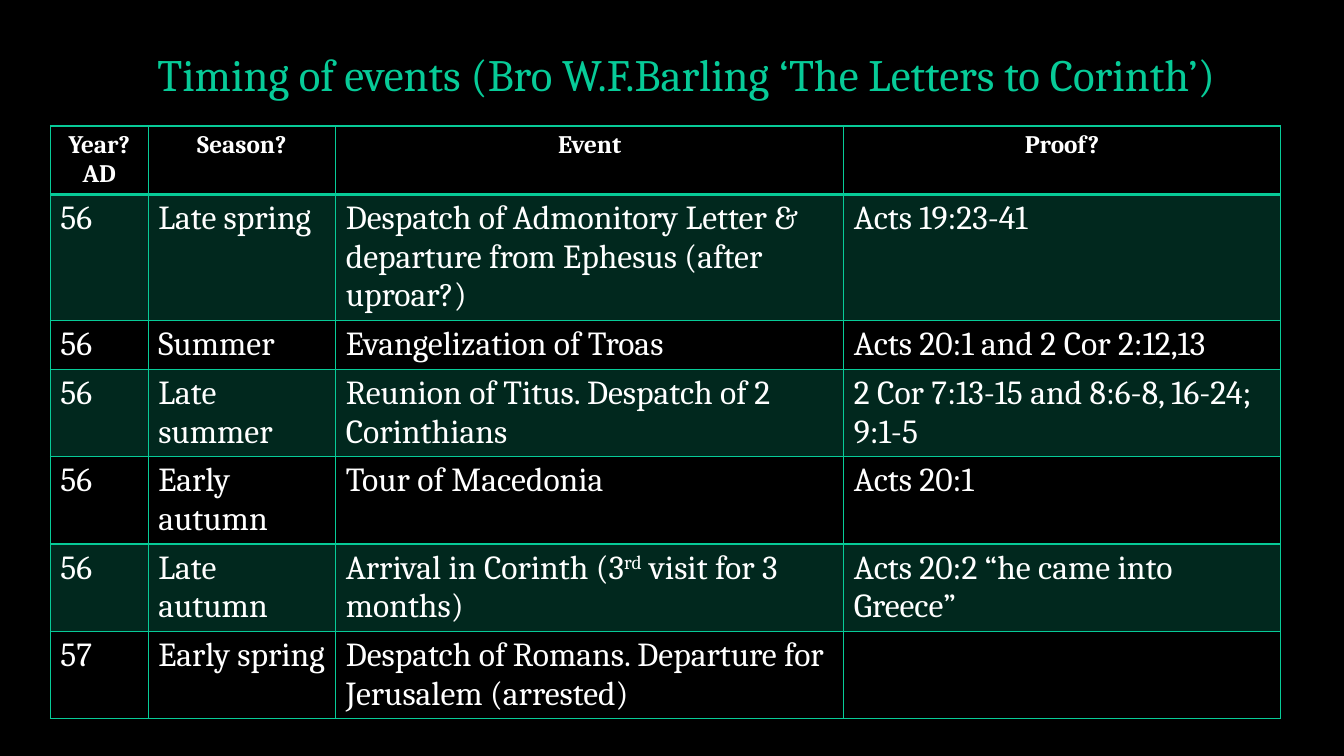
"""Builds the slide that dates the events around the letters to Corinth."""
from lxml import etree
from pptx import Presentation
from pptx.dml.color import RGBColor
from pptx.enum.text import MSO_ANCHOR, MSO_AUTO_SIZE, PP_ALIGN
from pptx.oxml.ns import qn
from pptx.util import Emu, Pt

CENTER, LEFT = PP_ALIGN.CENTER, PP_ALIGN.LEFT
BOTTOM = MSO_ANCHOR.BOTTOM
NO_AUTOFIT = MSO_AUTO_SIZE.NONE
EMU_PER_PX = 9144
TITLE_ONLY = 5

TITLE = "Timing of events (Bro W.F.Barling ‘The Letters to Corinth’)"
COLUMN_WIDTHS = [97, 186, 504, 433]
ROW_HEIGHT = 41
EVENTS = [
    ["Year? AD", "Season?", "Event", "Proof?"],
    ["56", "Late spring",
     "Despatch of Admonitory Letter & departure from Ephesus (after uproar?)",
     "Acts 19:23-41"],
    ["56", "Summer", "Evangelization of Troas", "Acts 20:1 and 2 Cor 2:12,13"],
    ["56", "Late summer", "Reunion of Titus. Despatch of 2 Corinthians",
     "2 Cor 7:13-15 and 8:6-8, 16-24; 9:1-5"],
    ["56", "Early autumn", "Tour of Macedonia", "Acts 20:1"],
    ["56", "Late autumn", "Arrival in Corinth (3^rd^ visit for 3 months)",
     "Acts 20:2 “he came into Greece”"],
    ["57", "Early spring",
     "Despatch of Romans. Departure for Jerusalem (arrested)", ""],
]


def px(length):
    return Emu(length * EMU_PER_PX)


def color(value):
    return RGBColor.from_string(value)


def write(frame, text, font="Cambria", size=24, ink="FFFFFF", bold=False,
          align=LEFT, spacing=None):
    para = frame.paragraphs[0]
    para.alignment = align
    para.line_spacing = spacing
    for index, part in enumerate(text.split("^")):
        if not part:
            continue
        span = para.add_run()
        span.text = part
        span.font.name = font
        span.font.size = Pt(size)
        span.font.bold = bold
        span.font.color.rgb = color(ink)
        if index % 2:
            span.font._element.set("baseline", "30000")


class Page:
    accent = "07CB98"
    background = "000000"
    band_alpha = 20

    def __init__(self, deck):
        self.slide = deck.slides.add_slide(deck.slide_layouts[TITLE_ONLY])
        fill = self.slide.background.fill
        fill.solid()
        fill.fore_color.rgb = color(self.background)

    def title(self, text, left, top, width, height):
        box = self.slide.shapes.title
        box.left, box.top = px(left), px(top)
        box.width, box.height = px(width), px(height)
        frame = box.text_frame
        frame.word_wrap = True
        frame.auto_size = NO_AUTOFIT
        frame.vertical_anchor = BOTTOM
        write(frame, text, size=32, ink=self.accent, align=CENTER, spacing=0.9)

    def table(self, rows, widths, row_height, left, top, height):
        holder = self.slide.shapes.add_table(
            len(rows), len(widths), px(left), px(top), px(sum(widths)), px(height))
        table = holder.table
        table.horz_banding = False
        table.first_row = False
        for column, width in zip(table.columns, widths):
            column.width = px(width)
        for row_index, texts in enumerate(rows):
            table.rows[row_index].height = px(row_height)
            for column_index, text in enumerate(texts):
                cell = table.cell(row_index, column_index)
                self.fill_cell(cell, banded=row_index % 2 == 1)
                self.border_cell(cell, top=2 if row_index == 1 else 1,
                                 bottom=2 if row_index == 0 else 1)
                if row_index == 0:
                    write(cell.text_frame, text, size=18, bold=True, align=CENTER)
                else:
                    write(cell.text_frame, text)
        holder.height = px(height)

    def fill_cell(self, cell, banded):
        if not banded:
            cell.fill.background()
            return
        cell.fill.solid()
        cell.fill.fore_color.rgb = color(self.accent)
        tint = cell._tc.tcPr.find(".//" + qn("a:srgbClr"))
        etree.SubElement(tint, qn("a:alpha"), val=str(self.band_alpha * 1000))

    def border_cell(self, cell, top, bottom):
        sides = {"lnL": 1, "lnR": 1, "lnT": top, "lnB": bottom}
        for index, (side, points) in enumerate(sides.items()):
            line = etree.Element(qn("a:" + side), w=str(Pt(points)))
            fill = etree.SubElement(line, qn("a:solidFill"))
            etree.SubElement(fill, qn("a:srgbClr"), val=self.accent)
            cell._tc.tcPr.insert(index, line)


def main():
    deck = Presentation()
    deck.slide_width, deck.slide_height = px(1333), px(750)
    page = Page(deck)
    page.title(TITLE, 61, 33, 1240, 72)
    page.table(EVENTS, COLUMN_WIDTHS, ROW_HEIGHT, left=50, top=125, height=610)
    deck.save("out.pptx")


if __name__ == "__main__":
    main()
